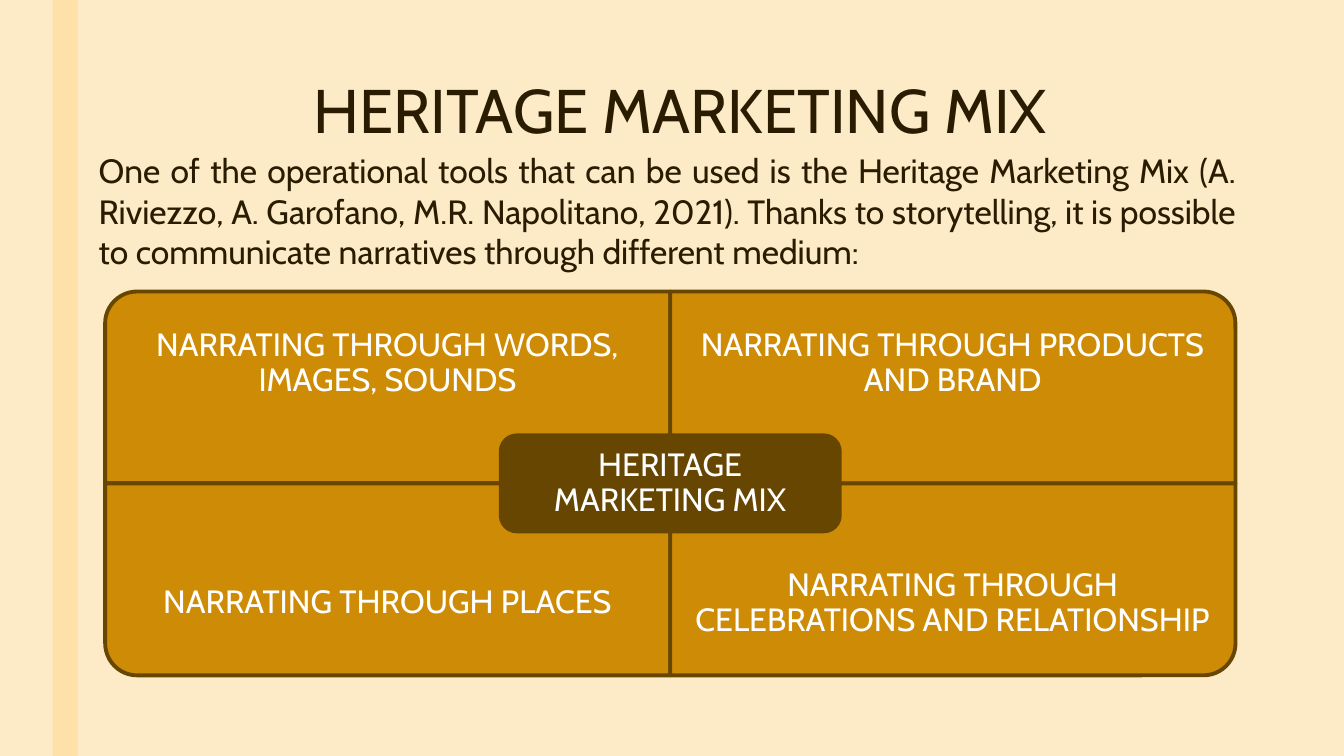
from pptx import Presentation
from pptx.dml.color import RGBColor
from pptx.enum.shapes import MSO_SHAPE
from pptx.enum.text import MSO_ANCHOR, MSO_AUTO_SIZE, PP_ALIGN
from pptx.util import Pt

RECTANGLE = MSO_SHAPE.RECTANGLE
ROUNDED = MSO_SHAPE.ROUNDED_RECTANGLE
ONE_ROUND_CORNER = MSO_SHAPE.ROUND_1_RECTANGLE
TOP, MIDDLE = MSO_ANCHOR.TOP, MSO_ANCHOR.MIDDLE
CENTER, JUSTIFY = PP_ALIGN.CENTER, PP_ALIGN.JUSTIFY
NO_AUTOFIT = MSO_AUTO_SIZE.NONE

CREAM, SAND, OCHRE = "FDEBC7", "FDE1A9", "CE8B05"
BROWN, INK, WHITE = "674602", "291C01", "FFFFFF"


def color(hex_value):
    return RGBColor.from_string(hex_value)


def write(shape, text, size, text_color, alignment=CENTER, spacing=0.9,
          anchor=MIDDLE, margins=(7.2, 3.6)):
    frame = shape.text_frame
    side, edge = (Pt(margin) for margin in margins)
    frame_format = {
        "word_wrap": True, "auto_size": NO_AUTOFIT, "vertical_anchor": anchor,
        "margin_left": side, "margin_right": side,
        "margin_top": edge, "margin_bottom": edge,
    }
    for name, value in frame_format.items():
        setattr(frame, name, value)
    frame.text = text
    paragraph = frame.paragraphs[0]
    paragraph.alignment = alignment
    paragraph.line_spacing = spacing
    font = paragraph.runs[0].font
    font.name = "Cabin"
    font.size = Pt(size)
    font.color.rgb = color(text_color)


presentation = Presentation()
presentation.slide_width = Pt(960)
presentation.slide_height = Pt(540)
slide = presentation.slides.add_slide(presentation.slide_layouts[5])
shapes = slide.shapes

# Background and side stripe
slide.background.fill.solid()
slide.background.fill.fore_color.rgb = color(CREAM)
stripe = shapes.add_shape(RECTANGLE, Pt(37.5), Pt(0), Pt(18), Pt(540))
stripe.shadow.inherit = False
stripe.fill.solid()
stripe.fill.fore_color.rgb = color(SAND)
stripe.line.fill.background()

# Title
title = shapes.title
title_place = {"left": 108, "top": 54, "width": 756, "height": 117}
for name, value in title_place.items():
    setattr(title, name, Pt(value))
write(title, "HERITAGE MARKETING MIX", 44, INK, spacing=0.89, anchor=TOP)

# Introduction
introduction = shapes.add_textbox(Pt(63.4), Pt(103.7), Pt(826.6), Pt(94.5))
write(introduction,
      "One of the operational tools that can be used is the Heritage Marketing "
      "Mix (A. Riviezzo, A. Garofano, M.R. Napolitano, 2021). Thanks to "
      "storytelling, it is possible to communicate narratives through "
      "different medium:",
      24, INK, JUSTIFY, 1.0, TOP)

# Four quadrants, each turned so that its round corner points outwards
LEFT, UPPER, WIDTH, HEIGHT, LABEL_HEIGHT = 75.1, 208.2, 403.7, 137.1, 103
quadrants = [
    (0, 0, 270, "NARRATING THROUGH WORDS, IMAGES, SOUNDS"),
    (0, 1, 0, "NARRATING THROUGH PRODUCTS AND BRAND"),
    (1, 0, 180, "NARRATING THROUGH PLACES"),
    (1, 1, 90, "NARRATING THROUGH CELEBRATIONS AND RELATIONSHIP"),
]
panels = []
for row, column, rotation, text in quadrants:
    x = LEFT + column * WIDTH
    y = UPPER + row * HEIGHT
    # A quarter turn swaps the sides around the same centre
    width, height = (HEIGHT, WIDTH) if rotation % 180 else (WIDTH, HEIGHT)
    panel = shapes.add_shape(
        ONE_ROUND_CORNER, Pt(x + (WIDTH - width) / 2),
        Pt(y + (HEIGHT - height) / 2), Pt(width), Pt(height))
    panel.rotation = rotation
    panels.append((panel, OCHRE))

    label_top = y + row * (HEIGHT - LABEL_HEIGHT)
    label = shapes.add_textbox(Pt(x), Pt(label_top), Pt(WIDTH), Pt(LABEL_HEIGHT))
    write(label, text, 23, WHITE, margins=(12.9, 12.9))

# Centre box
center_box = shapes.add_shape(ROUNDED, Pt(357.7), Pt(311), Pt(242.2), Pt(68.6))
write(center_box, "HERITAGE MARKETING MIX", 23, WHITE, margins=(7, 7))
panels.append((center_box, BROWN))

for panel, fill_color in panels:
    panel.shadow.inherit = False
    panel.fill.solid()
    panel.fill.fore_color.rgb = color(fill_color)
    panel.line.color.rgb = color(BROWN)
    panel.line.width = Pt(2.75)

presentation.save("out.pptx")
